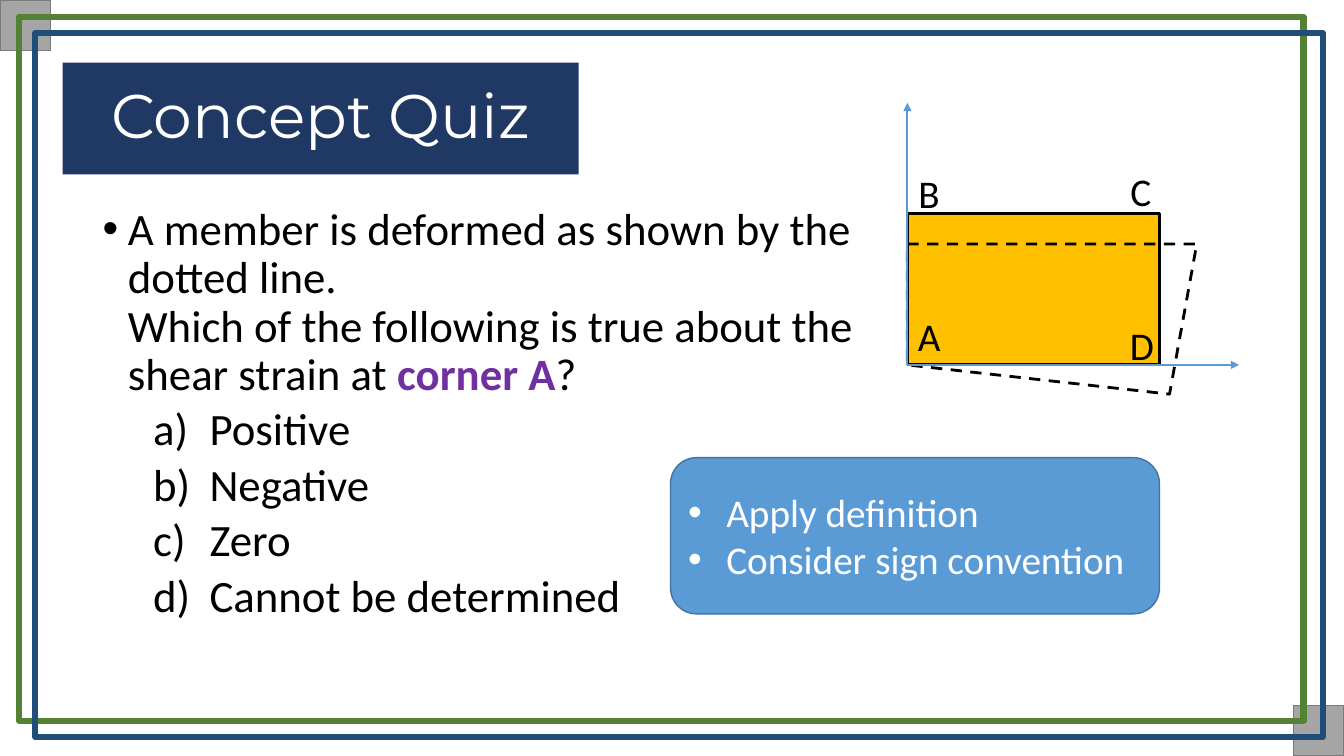
from lxml.etree import SubElement
from pptx import Presentation
from pptx.dml.color import RGBColor
from pptx.enum.dml import MSO_LINE
from pptx.enum.shapes import MSO_CONNECTOR, MSO_SHAPE
from pptx.enum.text import MSO_ANCHOR, PP_ALIGN
from pptx.oxml.ns import qn
from pptx.util import Inches, Pt

COLORS = {
    "gray": "A5A5A5", "gray_edge": "7A7A7A", "green": "548235", "teal": "1F4E79",
    "navy": "203864", "amber": "FFC000", "blue": "5B9BD5", "blue_edge": "43739E",
    "purple": "7030A0", "black": "000000", "white": "FFFFFF",
}


class QuizSlide:
    """Holds the slide and its style, and draws each kind of element."""

    def __init__(self, slide, font="Calibri"):
        self.shapes = slide.shapes
        self.font = font

    def color(self, name):
        return RGBColor.from_string(COLORS[name])

    def paint(self, shape, fill=None, line=None, weight=1):
        shape.shadow.inherit = False
        if fill:
            shape.fill.solid()
            shape.fill.fore_color.rgb = self.color(fill)
        else:
            shape.fill.background()
        if line:
            shape.line.color.rgb = self.color(line)
            shape.line.width = Pt(weight)
        else:
            shape.line.fill.background()
        return shape

    def box(self, left, top, width, height, kind=MSO_SHAPE.RECTANGLE, **paint):
        shape = self.shapes.add_shape(
            kind, Inches(left), Inches(top), Inches(width), Inches(height))
        return self.paint(shape, **paint)

    def text(self, left, top, width, height):
        frame = self.shapes.add_textbox(
            Inches(left), Inches(top), Inches(width), Inches(height)).text_frame
        frame.word_wrap = True
        return frame

    def style(self, paragraph, size, color, align=PP_ALIGN.LEFT, font=None):
        paragraph.alignment = align
        for run in paragraph.runs:
            run.font.size = Pt(size)
            run.font.name = font or self.font
            run.font.color.rgb = self.color(color)

    def bullet(self, paragraph, margin, hanging, numbering=None):
        props = paragraph._p.get_or_add_pPr()
        props.set("marL", str(Inches(margin)))
        props.set("indent", str(-Inches(hanging)))
        if numbering:
            SubElement(props, qn("a:buFont"), typeface="+mj-lt")
            SubElement(props, qn("a:buAutoNum"), type=numbering)
        else:
            SubElement(props, qn("a:buFont"), typeface="Arial")
            SubElement(props, qn("a:buChar"), char="•")

    def outline(self, points, **paint):
        corners = [(Inches(x), Inches(y)) for x, y in points]
        builder = self.shapes.build_freeform(*corners[0])
        builder.add_line_segments(corners[1:], close=True)
        return self.paint(builder.convert_to_shape(), **paint)

    def arrow(self, start, end, color, weight):
        arrow = self.shapes.add_connector(
            MSO_CONNECTOR.STRAIGHT, *(Inches(value) for value in start + end))
        arrow.line.color.rgb = self.color(color)
        arrow.line.width = Pt(weight)
        SubElement(arrow.line._get_or_add_ln(), qn("a:tailEnd"), type="triangle")
        SubElement(arrow._element.spPr, qn("a:effectLst"))


def main():
    deck = Presentation()
    deck.slide_width, deck.slide_height = Inches(13.33), Inches(7.5)
    quiz = QuizSlide(deck.slides.add_slide(deck.slide_layouts[6]))

    # Corner squares and double frame
    for left, top in ((0, 0), (12.83, 7)):
        quiz.box(left, top, 0.5, 0.5, fill="gray", line="gray_edge")
    quiz.box(0.19, 0.17, 12.74, 6.98, line="green", weight=4.5)
    quiz.box(0.35, 0.33, 12.77, 6.98, line="teal", weight=4.5)

    # Title
    title = quiz.box(0.62, 0.62, 5.12, 1.11, fill="navy").text_frame
    title.text = "Concept Quiz"
    title.vertical_anchor = MSO_ANCHOR.MIDDLE
    title.paragraphs[0].line_spacing = 0.9
    quiz.style(title.paragraphs[0], 44, "white", PP_ALIGN.CENTER, "Montserrat")

    # Question and answers
    body = quiz.text(0.92, 2, 7.75, 4.76)
    question = body.paragraphs[0]
    question.text = ("A member is deformed as shown by the dotted line.\n"
                     "Which of the following is true about the shear strain at ")
    corner = question.add_run()
    corner.text = "corner A"
    question.add_run().text = "?"
    question.line_spacing = 0.9
    question.space_before = Pt(10)
    quiz.style(question, 32, "black")
    corner.font.bold = True
    corner.font.color.rgb = quiz.color("purple")
    quiz.bullet(question, 0.25, 0.25)
    for choice in ("Positive", "Negative", "Zero", "Cannot be determined"):
        answer = body.add_paragraph()
        answer.text = choice
        answer.level = 1
        answer.line_spacing = 0.9
        answer.space_before = Pt(5)
        quiz.style(answer, 32, "black")
        quiz.bullet(answer, 1.06, 0.56, "alphaLcParenR")

    # Member before and after deformation
    origin = (9, 3.62)
    quiz.box(9, 2.12, 2.5, 1.5, fill="amber", line="black", weight=2)
    deformed = quiz.outline([(9, 2.42), (11.87, 2.42), (11.6, 3.91), origin],
                            line="black", weight=2)
    deformed.line.dash_style = MSO_LINE.DASH

    # Corner letters
    for letter, left, top in (("A", 8.83, 3.05), ("B", 8.83, 1.63),
                              ("C", 10.93, 1.61), ("D", 10.94, 3.14)):
        label = quiz.text(left, top, 0.77, 0.57)
        label.text = letter
        quiz.style(label.paragraphs[0], 28, "black", PP_ALIGN.CENTER)

    # Axes
    for axis_end in ((12.29, 3.62), (9, 1.02)):
        quiz.arrow(origin, axis_end, "blue", 1.5)

    # Hints
    hints = quiz.box(6.65, 4.54, 4.85, 1.55, MSO_SHAPE.ROUNDED_RECTANGLE,
                     fill="blue", line="blue_edge").text_frame
    hints.text = "Apply definition\nConsider sign convention"
    hints.vertical_anchor = MSO_ANCHOR.MIDDLE
    for hint in hints.paragraphs:
        quiz.style(hint, 28, "white")
        quiz.bullet(hint, 0.38, 0.38)

    deck.save("out.pptx")


if __name__ == "__main__":
    main()
